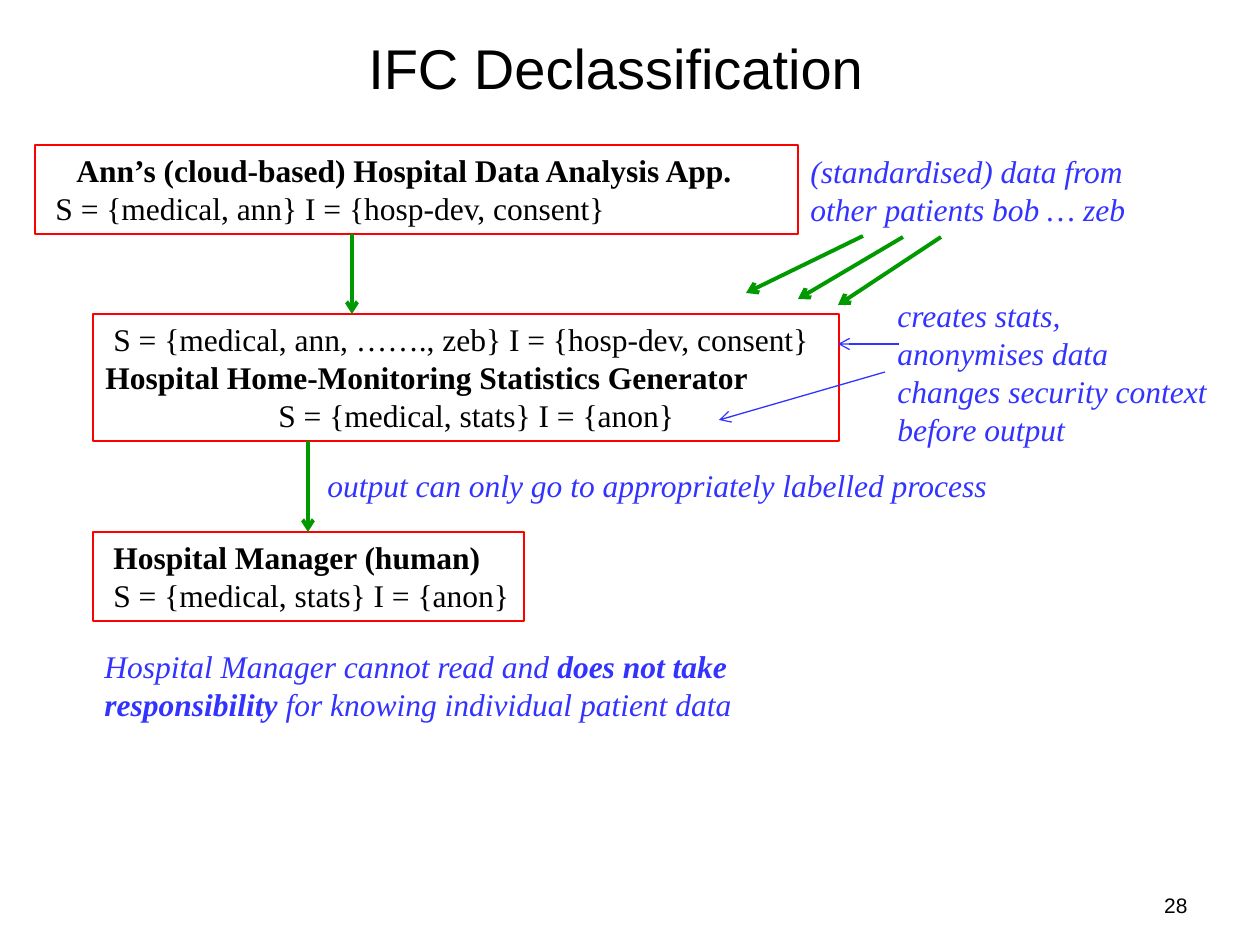
from dataclasses import dataclass

from lxml.etree import SubElement
from pptx import Presentation
from pptx.dml.color import RGBColor
from pptx.enum.shapes import MSO_CONNECTOR as Connector, MSO_SHAPE as Shape
from pptx.enum.text import MSO_ANCHOR as Anchor, MSO_AUTO_SIZE as AutoSize, PP_ALIGN as Align
from pptx.oxml.ns import qn
from pptx.slide import Slide
from pptx.text.text import TextFrame
from pptx.util import Pt

EMU_PER_PX = 914400 / 126
COLORS = {"text": "000000", "box": "FF0000", "flow": "009900", "note": "3333FF"}
SERIF, SANS = "Times New Roman", "Arial"


@dataclass(frozen=True)
class Span:
    text: str
    bold: bool = False


@dataclass(frozen=True)
class Line:
    spans: tuple[Span, ...]
    indent: int = 0


@dataclass(frozen=True)
class Block:
    left: int
    top: int
    width: int
    height: int
    lines: tuple[Line, ...]
    wrap: bool = True


@dataclass(frozen=True)
class Arrow:
    tail: tuple[int, int]
    tip: tuple[int, int]


def line(text: str, indent: int = 0, bold: bool = False) -> Line:
    return Line((Span(text, bold),), indent)


PROCESSES = (
    Block(35, 145, 763, 89, (
        line("Ann’s (cloud-based) Hospital Data Analysis App.", 29, bold=True),
        line("S = {medical, ann} I = {hosp-dev, consent}", 8),
    )),
    Block(93, 314, 746, 127, (
        line("S = {medical, ann, ……., zeb} I = {hosp-dev, consent}", 8),
        line("Hospital Home-Monitoring Statistics Generator", bold=True),
        line("S = {medical, stats} I = {anon}", 173),
    )),
    Block(93, 532, 431, 89, (
        line("Hospital Manager (human)", 8, bold=True),
        line("S = {medical, stats} I = {anon}", 8),
    )),
)
NOTES = (
    Block(798, 146, 357, 89, (
        line("(standardised) data from"),
        line("other patients bob … zeb"),
    )),
    Block(885, 290, 338, 165, (
        line("creates stats,"),
        line("anonymises data"),
        line("changes security context"),
        line("before output"),
    ), wrap=False),
    Block(315, 460, 726, 50, (line("output can only go to appropriately labelled process"),)),
    Block(92, 641, 811, 89, (
        Line((
            Span("Hospital Manager cannot read and "),
            Span("does not take responsibility ", bold=True),
            Span("for knowing individual patient data"),
        )),
    )),
)
FLOWS = (
    Arrow((352, 234), (352, 314)),
    Arrow((308, 441), (308, 532)),
    Arrow((863, 236), (746, 293)),
    Arrow((903, 237), (798, 299)),
    Arrow((941, 237), (838, 305)),
)
POINTERS = (
    Arrow((899, 344), (838, 344)),
    Arrow((885, 372), (719, 420)),
)


def px(length: int) -> int:
    return round(length * EMU_PER_PX)


def rgb(name: str) -> RGBColor:
    return RGBColor.from_string(COLORS[name])


def write_lines(frame: TextFrame, block: Block, color: str, italic: bool = False) -> None:
    frame.word_wrap = block.wrap
    frame.vertical_anchor = Anchor.TOP
    for number, content in enumerate(block.lines):
        paragraph = frame.add_paragraph() if number else frame.paragraphs[0]
        paragraph.alignment = Align.LEFT
        if content.indent:
            paragraph._p.get_or_add_pPr().set("marL", str(px(content.indent)))
        for span in content.spans:
            run = paragraph.add_run()
            run.text = span.text
            run.font.name, run.font.size = SERIF, Pt(18)
            run.font.bold, run.font.italic = span.bold, italic
            run.font.color.rgb = rgb(color)


def add_process(slide: Slide, block: Block) -> None:
    box = slide.shapes.add_shape(
        Shape.RECTANGLE, px(block.left), px(block.top), px(block.width), px(block.height))
    box.shadow.inherit = False
    box.fill.background()
    box.line.color.rgb = rgb("box")
    box.line.width = Pt(1.5)
    write_lines(box.text_frame, block, "text")


def add_note(slide: Slide, block: Block) -> None:
    note = slide.shapes.add_textbox(
        px(block.left), px(block.top), px(block.width), px(block.height))
    write_lines(note.text_frame, block, "note", italic=True)


def add_arrow(slide: Slide, arrow: Arrow, color: str, width: float) -> None:
    connector = slide.shapes.add_connector(
        Connector.STRAIGHT, *map(px, arrow.tail + arrow.tip))
    connector.line.color.rgb = rgb(color)
    connector.line.width = Pt(width)
    SubElement(connector.line._get_or_add_ln(), qn("a:tailEnd"), type="arrow")
    SubElement(connector._element.spPr, qn("a:effectLst"))


def style_single(frame: TextFrame, text: str, size: int, alignment: Align) -> None:
    frame.text = text
    paragraph = frame.paragraphs[0]
    paragraph.alignment = alignment
    font = paragraph.runs[0].font
    font.name, font.size = SANS, Pt(size)
    font.color.rgb = rgb("text")


def main() -> None:
    deck = Presentation()
    deck.slide_width, deck.slide_height = px(1260), px(945)
    slide = deck.slides.add_slide(deck.slide_layouts[5])

    title = slide.shapes.title
    title.left, title.top, title.width, title.height = map(px, (49, 29, 1134, 77))
    style_single(title.text_frame, "IFC Declassification", 32, Align.CENTER)
    title.text_frame.vertical_anchor = Anchor.MIDDLE
    title.text_frame.auto_size = AutoSize.NONE

    for process in PROCESSES:
        add_process(slide, process)
    for note in NOTES:
        add_note(slide, note)
    for flow in FLOWS:
        add_arrow(slide, flow, "flow", 2.25)
    for pointer in POINTERS:
        add_arrow(slide, pointer, "note", 0.75)

    page_number = slide.shapes.add_textbox(*map(px, (903, 886, 297, 40)))
    style_single(page_number.text_frame, "28", 12, Align.RIGHT)

    deck.save("out.pptx")


if __name__ == "__main__":
    main()
